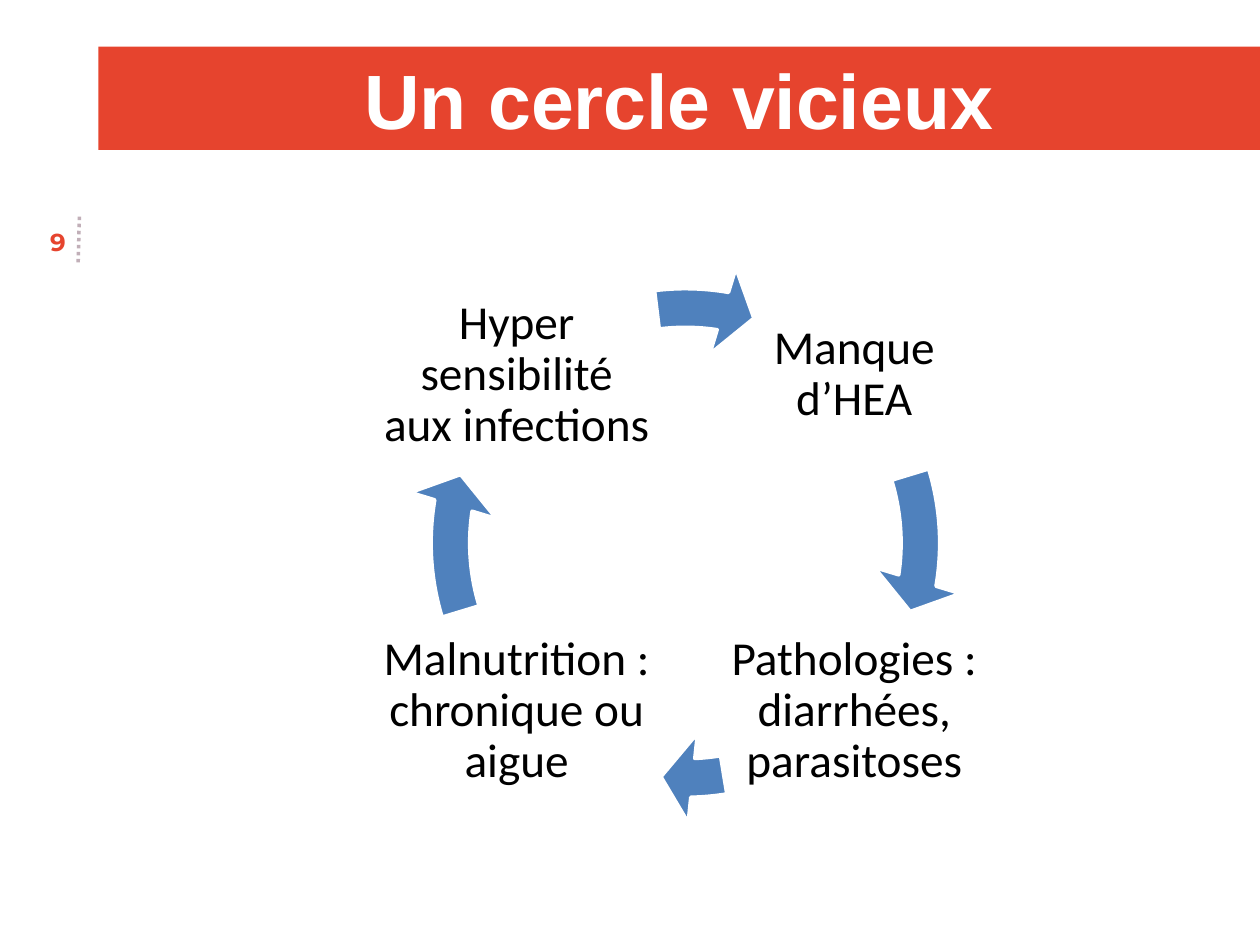
"""Build a slide showing a vicious circle of four linked health problems."""
from lxml import etree
from pptx import Presentation
from pptx import util as u
from pptx.dml.color import RGBColor
from pptx.enum import dml, shapes, text
from pptx.oxml.ns import qn

RED = RGBColor(0xE6, 0x44, 0x2E)
BLUE = RGBColor(0x4F, 0x81, 0xBD)
MAUVE = RGBColor(0xC1, 0xAF, 0xB8)
WHITE = RGBColor(0xFF, 0xFF, 0xFF)
BLACK = RGBColor(0, 0, 0)

TITLE = "Un cercle vicieux"
PAGE_NUMBER = "9"
CENTER_X, TOP_ROW, BOTTOM_ROW, LABEL_HEIGHT = 5.44, 2.19, 4.86, 1.57
LABEL_OFFSET = 1.34
RING = (3.22, 2.09, 4.44, 4.44)
RING_THICKNESS, HEAD_ANGLE, HEAD_WIDTH = 0.069, 4.65, 0.08
STEPS = [
    {"label": "Manque d’HEA", "side": 1, "top": TOP_ROW, "width": 1.57,
     "end": 5.51, "start": 205.84},
    {"label": "Pathologies : diarrhées, parasitoses", "side": 1, "top": BOTTOM_ROW,
     "width": 2.06, "end": 52.92, "start": 48.38},
    {"label": "Malnutrition : chronique ou aigue", "side": -1, "top": BOTTOM_ROW,
     "width": 2.28, "end": 113.51, "start": 97.84},
    {"label": "Hyper sensibilité aux infections", "side": -1, "top": TOP_ROW,
     "width": 2.22, "end": 167.51, "start": 157.83},
]


def inches(*lengths):
    return [u.Inches(length) for length in lengths]


def write(shape, words, font, size, color, align, bold=False, margin=None):
    frame = shape.text_frame
    frame.word_wrap = True
    frame.vertical_anchor = text.MSO_ANCHOR.MIDDLE
    if margin is not None:
        frame.margin_left = frame.margin_right = u.Inches(margin)
        frame.margin_top = frame.margin_bottom = u.Inches(margin)
    paragraph = frame.paragraphs[0]
    paragraph.alignment = align
    run = paragraph.add_run()
    run.text = words
    run.font.name, run.font.size, run.font.bold = font, u.Pt(size), bold
    run.font.color.rgb = color
    return paragraph


def add_heading(slide):
    title = slide.shapes.title
    title.left, title.top, title.width, title.height = inches(0.78, 0.37, 9.22, 0.82)
    title.fill.solid()
    title.fill.fore_color.rgb = RED
    write(title, TITLE, "Arial", 44, WHITE, text.PP_ALIGN.CENTER, True, 0.04)


def add_page_number(slide):
    divider = slide.shapes.add_connector(
        shapes.MSO_CONNECTOR.STRAIGHT, *inches(0.63, 1.72, 0.62, 2.11))
    divider.line.color.rgb = MAUVE
    divider.line.width = u.Pt(2)
    divider.line.dash_style = dml.MSO_LINE.ROUND_DOT
    etree.SubElement(divider._element.spPr, qn("a:effectLst"))
    number = slide.shapes.add_textbox(*inches(0, 1.72, 0.62, 0.39))
    write(number, PAGE_NUMBER, "Montserrat", 14, RED, text.PP_ALIGN.RIGHT, True)


def add_step(cycle, step):
    left = CENTER_X + step["side"] * LABEL_OFFSET - step["width"] / 2
    label = cycle.shapes.add_textbox(
        *inches(left, step["top"], step["width"], LABEL_HEIGHT))
    paragraph = write(label, step["label"], "Calibri", 27, BLACK,
                      text.PP_ALIGN.CENTER, margin=0.04)
    paragraph.line_spacing = 0.9
    arrow = cycle.shapes.add_shape(shapes.MSO_SHAPE.CIRCULAR_ARROW, *inches(*RING))
    settings = (RING_THICKNESS, HEAD_ANGLE, step["end"], step["start"], HEAD_WIDTH)
    for index, value in enumerate(settings):
        arrow.adjustments[index] = value
    arrow.shadow.inherit = False
    arrow.fill.solid()
    arrow.fill.fore_color.rgb = BLUE
    arrow.line.color.rgb = WHITE
    arrow.line.width = u.Pt(2)


def main():
    presentation = Presentation()
    presentation.slide_width, presentation.slide_height = inches(10, 7.5)
    slide = presentation.slides.add_slide(presentation.slide_layouts[5])
    add_heading(slide)
    add_page_number(slide)
    cycle = slide.shapes.add_group_shape()
    for step in STEPS:
        add_step(cycle, step)
    presentation.save("out.pptx")


if __name__ == "__main__":
    main()
